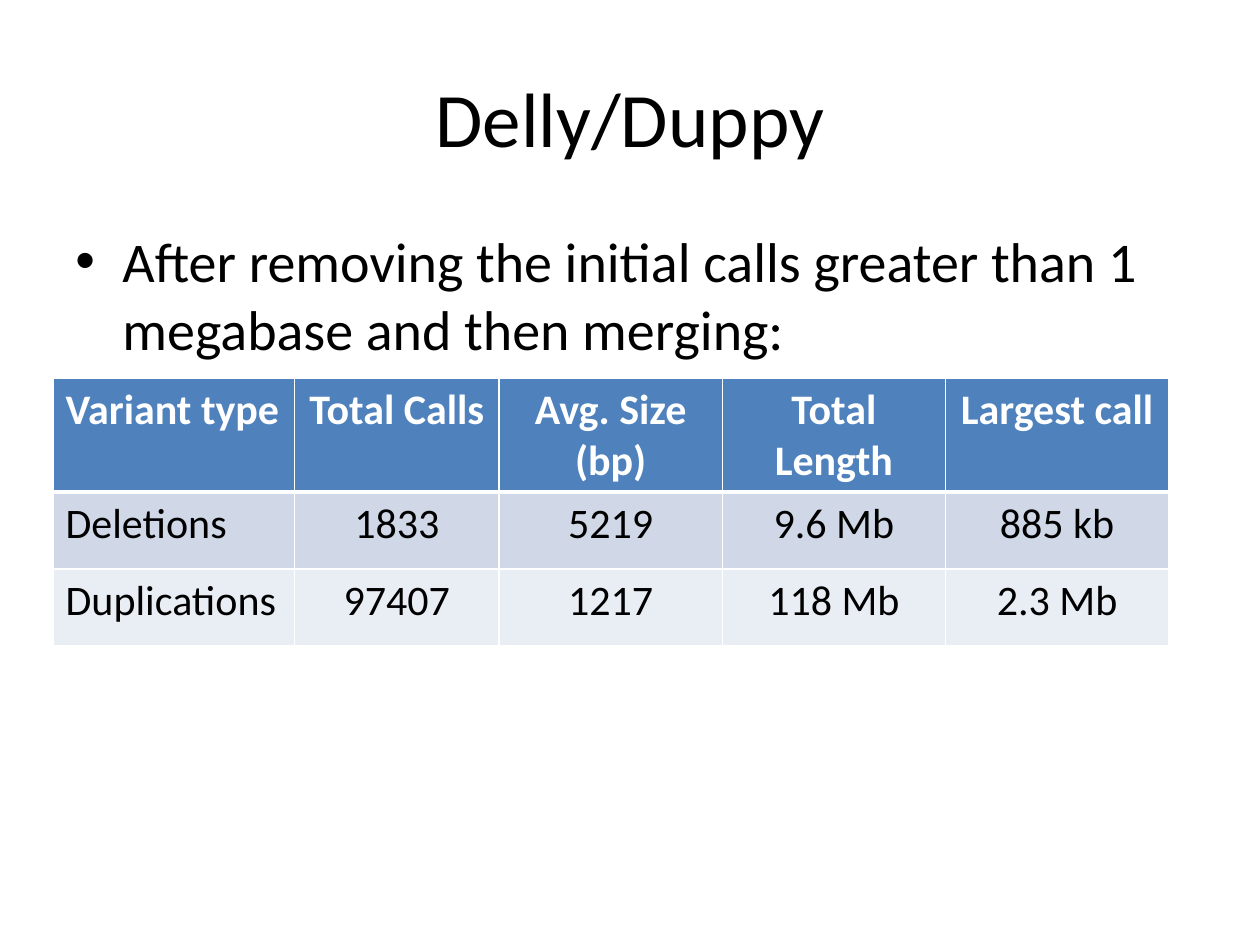
from lxml import etree
from pptx import Presentation
from pptx.dml.color import RGBColor
from pptx.enum.text import MSO_ANCHOR, PP_ALIGN
from pptx.oxml.ns import qn
from pptx.util import Cm, Pt

BLACK = RGBColor(0x00, 0x00, 0x00)
WHITE = RGBColor(0xFF, 0xFF, 0xFF)
HEADER_BLUE = RGBColor(0x4F, 0x81, 0xBD)
BAND_FILLS = (RGBColor(0xD0, 0xD8, 0xE8), RGBColor(0xE9, 0xED, 0xF4))
LEFT = PP_ALIGN.LEFT
CENTER = PP_ALIGN.CENTER
MIDDLE = MSO_ANCHOR.MIDDLE
TITLE_ONLY = 5
FONT = "Calibri"

COLUMN_WIDTHS = (4.87, 4.12, 4.5, 4.5, 4.5)
ROW_HEIGHTS = (2.29, 1.55, 1.55)
VARIANT_ROWS = (
    ("Variant type", "Total Calls", "Avg. Size (bp)", "Total Length", "Largest call"),
    ("Deletions", "1833", "5219", "9.6 Mb", "885 kb"),
    ("Duplications", "97407", "1217", "118 Mb", "2.3 Mb"),
)


def format_paragraph(paragraph, size, color, alignment, bold=False):
    paragraph.alignment = alignment
    font = paragraph.font
    font.name = FONT
    font.size = Pt(size)
    font.bold = bold
    font.color.rgb = color


def set_title(slide, text):
    title = slide.shapes.title
    title.left, title.top = Cm(1.27), Cm(0.76)
    title.width, title.height = Cm(22.86), Cm(3.18)
    title.text_frame.text = text
    title.text_frame.vertical_anchor = MIDDLE
    format_paragraph(title.text_frame.paragraphs[0], 44, BLACK, CENTER)


def add_bullet_text(slide, text):
    shape = slide.shapes.add_textbox(Cm(1.27), Cm(4.45), Cm(22.86), Cm(12.57))
    shape.text_frame.word_wrap = True
    paragraph = shape.text_frame.paragraphs[0]
    paragraph.text = text
    paragraph.space_before = Pt(6.4)
    format_paragraph(paragraph, 32, BLACK, LEFT)
    properties = paragraph._p.get_or_add_pPr()
    properties.set("marL", str(Cm(0.95)))
    properties.set("indent", str(-Cm(0.95)))
    bullet_font = etree.Element(qn("a:buFont"), typeface="Arial")
    bullet = etree.Element(qn("a:buChar"), char="•")
    properties.find(qn("a:defRPr")).addprevious(bullet_font)
    bullet_font.addnext(bullet)


def add_cell_borders(cell, widths):
    properties = cell._tc.get_or_add_tcPr()
    for side, width in zip("LRTB", widths):
        line = etree.SubElement(properties, qn(f"a:ln{side}"), w=str(Pt(width)))
        fill = etree.SubElement(line, qn("a:solidFill"))
        etree.SubElement(fill, qn("a:srgbClr"), val=str(WHITE))


def fill_cell(cell, text, row, column):
    is_header = row == 0
    add_cell_borders(cell, (1, 1, 3 if row == 1 else 1, 3 if is_header else 1))
    cell.fill.solid()
    cell.fill.fore_color.rgb = HEADER_BLUE if is_header else BAND_FILLS[(row - 1) % 2]
    cell.text = text
    format_paragraph(
        cell.text_frame.paragraphs[0],
        24,
        WHITE if is_header else BLACK,
        LEFT if column == 0 else CENTER,
        is_header,
    )


def add_variant_table(slide):
    table = slide.shapes.add_table(
        len(VARIANT_ROWS), len(COLUMN_WIDTHS), Cm(1.07), Cm(7.63),
        Cm(sum(COLUMN_WIDTHS)), Cm(sum(ROW_HEIGHTS)),
    ).table
    for column, width in zip(table.columns, COLUMN_WIDTHS):
        column.width = Cm(width)
    for row, height in zip(table.rows, ROW_HEIGHTS):
        row.height = Cm(height)
    for row, values in enumerate(VARIANT_ROWS):
        for column, text in enumerate(values):
            fill_cell(table.cell(row, column), text, row, column)


def main():
    presentation = Presentation()
    presentation.slide_width = Cm(25.4)
    presentation.slide_height = Cm(19.05)
    slide = presentation.slides.add_slide(presentation.slide_layouts[TITLE_ONLY])
    set_title(slide, "Delly/Duppy")
    add_bullet_text(
        slide,
        "After removing the initial calls greater than 1 megabase and then merging:",
    )
    add_variant_table(slide)
    presentation.save("out.pptx")


if __name__ == "__main__":
    main()
